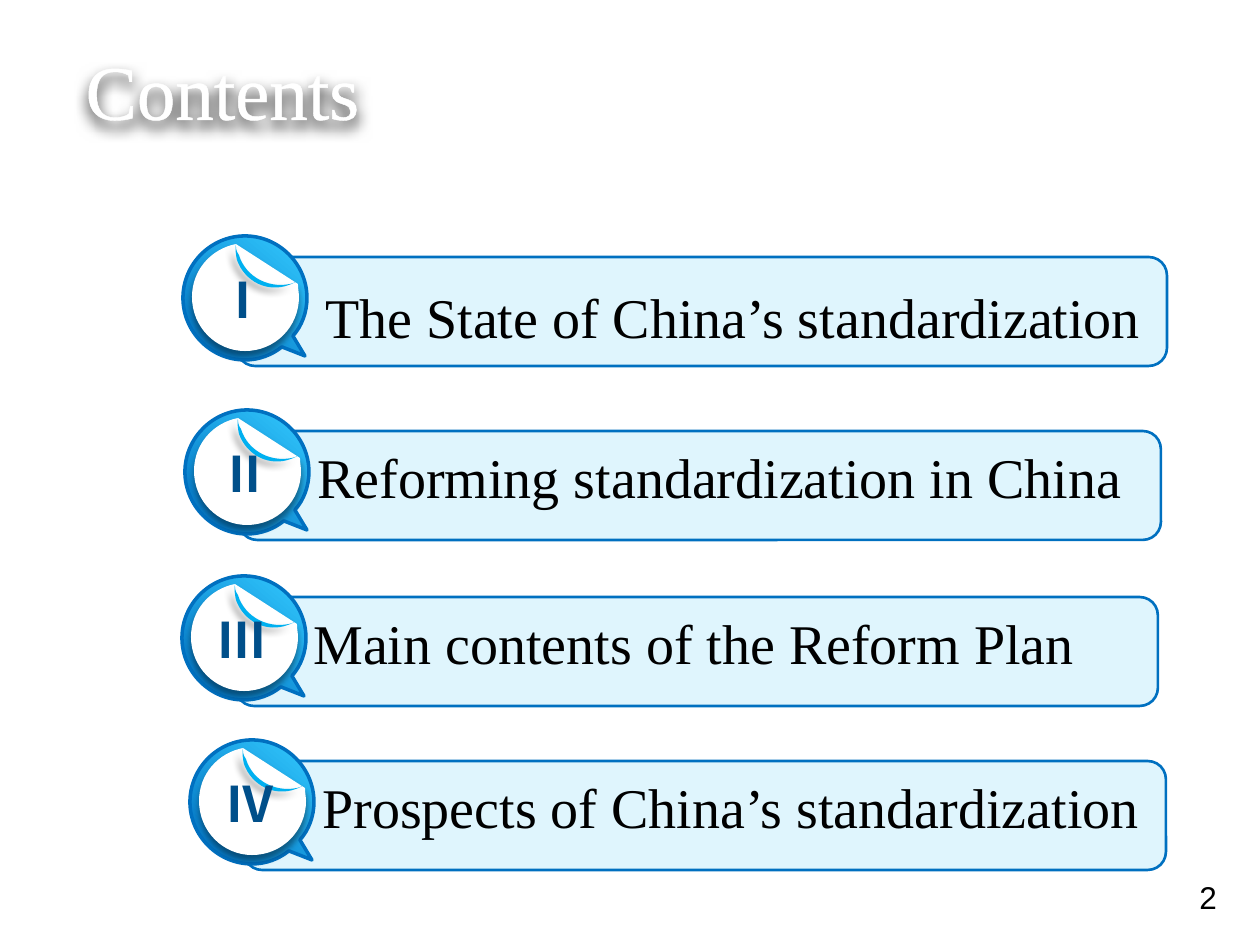
from lxml import etree
from pptx import Presentation, util as u
from pptx.dml.color import RGBColor
from pptx.enum import shapes as kinds, text
from pptx.oxml.ns import qn

PX = 914400 / 126
HUE = {"panel": "DFF5FD", "edge": "0070C0", "glow": "33CAFF", "curl": "00B0F0",
       "num": "004F8A", "white": "FFFFFF", "black": "000000"}
SERIF = "Times New Roman"
ROWS = [
    ((237, 257, 930, 109), "Ⅰ", "The State of China’s standardization", (76, 19)),
    ((239, 431, 922, 109), "Ⅱ", "Reforming standardization in China", (66, 5)),
    ((236, 597, 922, 109), "Ⅲ", "Main contents of the Reform Plan", (65, 5)),
    ((244, 761, 922, 109), "Ⅳ", "Prospects of China’s standardization", (66, 5)),
]
RING = [
    [(0, -62)],
    [(34, -62), (62, -34), (62, 0)],
    [(62, 14), (57, 28), (48, 38)],
    [(60, 58)],
    [(37, 49)],
    [(27, 57), (14, 62), (0, 62)],
    [(-34, 62), (-62, 34), (-62, 0)],
    [(-62, -34), (-34, -62), (0, -62)],
]
DISC = [
    [(-9, -54)],
    [(53, -14)],
    [(53, -9), (54, -5), (54, -1)],
    [(54, 29), (30, 53), (0, 53)],
    [(-29, 53), (-53, 29), (-53, -1)],
    [(-53, -28), (-34, -49), (-9, -54)],
]
CURL = [
    [(-9, -54)],
    [(-9, -50), (-9, -47), (-6, -43)],
    [(1, -20), (26, -8), (49, -15)],
    [(49, -15), (50, -15), (50, -16)],
    [(49, -15), (47, -14), (44, -13)],
    [(23, -5), (0, -16), (-8, -38)],
    [(-9, -43), (-10, -49), (-9, -54)],
]


def emu(*nums):
    return [u.Emu(round(n * PX)) for n in nums]


def tint(name):
    return RGBColor.from_string(HUE[name])


def shade(shape, alpha, blur, dist, turn):
    shape.shadow.inherit = False
    glow = etree.SubElement(
        shape._element.spPr.find(qn("a:effectLst")), qn("a:outerShdw"),
        blurRad=str(u.Pt(blur)), dist=str(u.Pt(dist)), dir=str(turn * 60000),
        algn="ctr", rotWithShape="0")
    ink = etree.SubElement(glow, qn("a:srgbClr"), val=HUE["black"])
    etree.SubElement(ink, qn("a:alpha"), val=str(alpha * 1000))


def style(para, size, face, color, bold=False):
    font = para.font
    font.size, font.name, font.bold = u.Pt(size), face, bold
    font.color.rgb = tint(color)
    return para._p.get_or_add_pPr().get_or_add_defRPr()


def label(parent, box, words, size, face, color, bold=False, align=None):
    frame = parent.add_textbox(*emu(*box)).text_frame
    frame.word_wrap = True
    frame.auto_size = text.MSO_AUTO_SIZE.SHAPE_TO_FIT_TEXT
    para = frame.paragraphs[0]
    para.text = words
    para.alignment = align
    return style(para, size, face, color, bold)


def outline(parent, mid, steps):
    spots = [emu(mid[0] + x, mid[1] + y) for step in steps for x, y in step]
    build = parent.build_freeform(*spots[0])
    build.add_line_segments(spots[1:], close=True)
    form = build.convert_to_shape()
    form.shadow.inherit = False
    track = form._element.spPr.find(".//" + qn("a:path"))
    lines = iter(track.findall(qn("a:lnTo")))
    for step in steps[1:]:
        parts = [next(lines) for _ in step]
        if len(parts) == 3:
            curve = etree.Element(qn("a:cubicBezTo"))
            parts[0].addprevious(curve)
            for part in parts:
                curve.append(part[0])
                track.remove(part)
    return form


def badge(parent, mid, num):
    ring = outline(parent, mid, RING)
    ring.fill.gradient()
    ring.fill.gradient_angle = 50
    for stop, pos, name in zip(ring.fill.gradient_stops, (0.02, 1), ("edge", "glow")):
        stop.position = pos
        stop.color.rgb = tint(name)
    ring.line.color.rgb = tint("edge")
    ring.line.width = u.Pt(2)
    for steps, name, turn in ((DISC, "white", 90), (CURL, "curl", 135)):
        form = outline(parent, mid, steps)
        form.fill.solid()
        form.fill.fore_color.rgb = tint(name)
        form.line.fill.background()
        shade(form, 40, 4, 3, turn)
    face = "Noto Sans CJK SC"
    props = label(parent, (mid[0] - 58, mid[1] - 35, 111, 72), num, 28, face,
                  "num", True, text.PP_ALIGN.CENTER)
    etree.SubElement(props, qn("a:ea"), typeface=face)


def row(slide, box, num, words, shift):
    group = slide.shapes.add_group_shape().shapes
    panel = group.add_shape(kinds.MSO_SHAPE.ROUNDED_RECTANGLE, *emu(*box))
    panel.shadow.inherit = False
    panel.fill.solid()
    panel.fill.fore_color.rgb = tint("panel")
    panel.line.color.rgb = tint("edge")
    panel.line.width = u.Pt(1.5)
    x, y = box[:2]
    badge(group, (x + 8, y + 41), num)
    label(group, (x + shift[0], y + shift[1], 1018, 81), words, 32, SERIF, "black")


def head(slide, box, words):
    title = slide.shapes.title
    title.left, title.top, title.width, title.height = emu(*box)
    frame = title.text_frame
    frame.text = words
    frame.vertical_anchor = text.MSO_ANCHOR.MIDDLE
    para = frame.paragraphs[0]
    para.alignment = text.PP_ALIGN.LEFT
    props = style(para, 44, SERIF, "white")
    line = etree.Element(qn("a:ln"), w=str(u.Pt(1.45)))
    fill = etree.SubElement(line, qn("a:solidFill"))
    etree.SubElement(fill, qn("a:srgbClr"), val=HUE["white"])
    props.insert(0, line)
    shade(title, 65, 8, 4, 90)


def main():
    deck = Presentation()
    deck.slide_width, deck.slide_height = emu(1260, 945)
    slide = deck.slides.add_slide(deck.slide_layouts[5])
    head(slide, (73, 10, 1176, 158), "Contents")
    for item in ROWS:
        row(slide, *item)
    label(slide.shapes, (1187, 872, 63, 53), "2", 18, "Arial", "black")
    deck.save("out.pptx")


if __name__ == "__main__":
    main()
